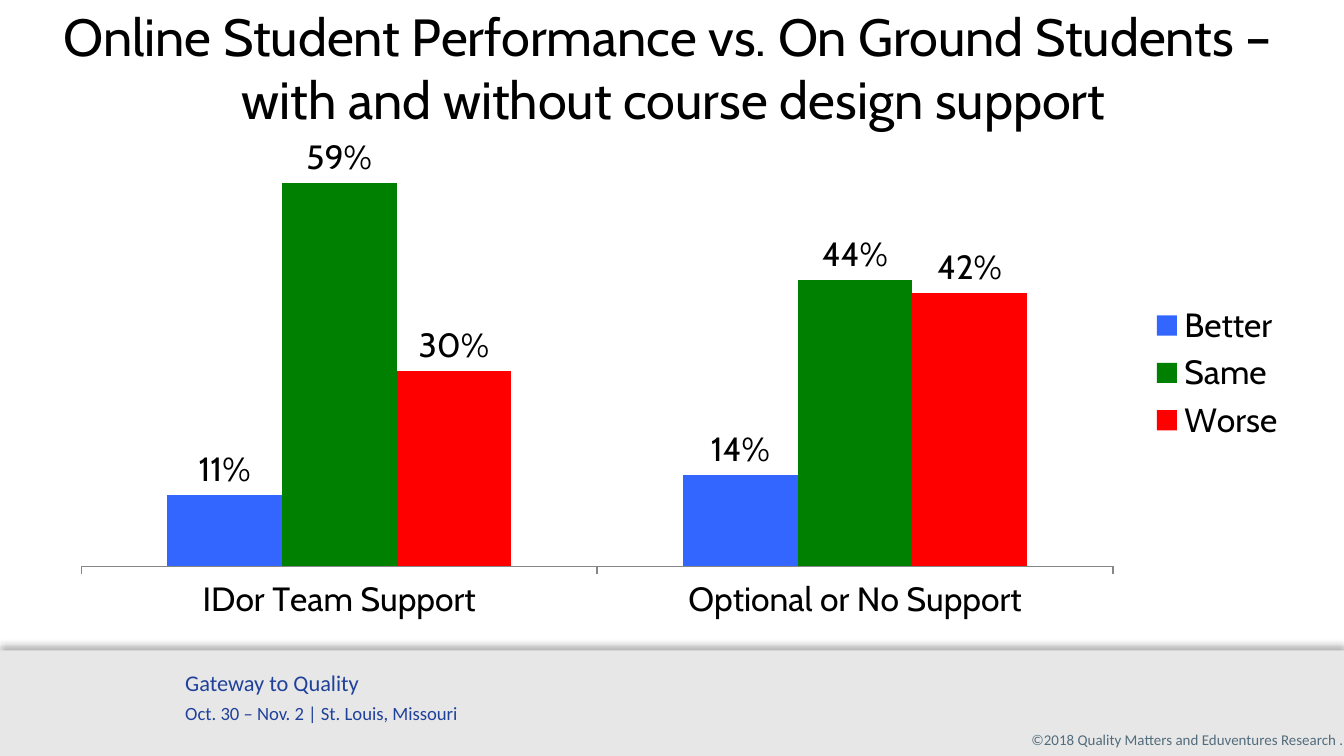
from lxml.etree import SubElement
from pptx import Presentation
from pptx.chart.data import CategoryChartData
from pptx.dml.color import RGBColor
from pptx.enum.chart import XL_CHART_TYPE, XL_LABEL_POSITION, XL_LEGEND_POSITION, XL_TICK_LABEL_POSITION, XL_TICK_MARK
from pptx.enum.shapes import MSO_SHAPE
from pptx.enum.text import MSO_ANCHOR, PP_ALIGN
from pptx.oxml import parse_xml
from pptx.oxml.ns import nsdecls, qn
from pptx.util import Inches, Pt

hues = {"ink": "000000", "band": "E7E7E7", "event": "1F419A", "rights": "526C7C", "axis": "868686",
        "Better": "3366FF", "Same": "008000", "Worse": "FF0000"}
rates = {"Better": (0.11, 0.14), "Same": (0.59, 0.44), "Worse": (0.3, 0.42)}

deck = Presentation()
deck.slide_width, deck.slide_height = Inches(10), Inches(5.625)
slide = deck.slides.add_slide(deck.slide_layouts[0])
shapes = slide.shapes


def area(left, top, width, height):
    wide, high = deck.slide_width / 100, deck.slide_height / 100
    return int(left * wide), int(top * high), int(width * wide), int(height * high)


def style(font, size, face, hue):
    font.size, font.name = Pt(size), face
    font.color.rgb = RGBColor.from_string(hues[hue])


slide.placeholders[1].element.getparent().remove(slide.placeholders[1].element)

band = shapes.add_shape(MSO_SHAPE.RECTANGLE, *area(0, 86.04, 100, 13.96))
band.fill.solid()
band.fill.fore_color.rgb = RGBColor.from_string(hues["band"])
band.line.fill.background()
band.element.spPr.append(parse_xml(
    f'<a:effectLst {nsdecls("a")}><a:outerShdw blurRad="{Pt(4)}" dist="{Pt(3)}" dir="16200000" rotWithShape="0">'
    f'<a:srgbClr val="{hues["ink"]}"><a:alpha val="30000"/></a:srgbClr></a:outerShdw></a:effectLst>'))

event = shapes.add_textbox(*area(12.8, 87.64, 63.9, 9.07)).text_frame
event.word_wrap = True
event.text = "Gateway to Quality\nOct. 30 – Nov. 2 | St. Louis, Missouri"
for line, size in zip(event.paragraphs, (12, 10)):
    style(line.font, size, "Calibri", "event")
event.paragraphs[1].space_before = Pt(3)

rights = shapes.add_textbox(*area(74.7, 95.82, 25.3, 4.27)).text_frame
rights.word_wrap = True
rights.margin_right = 0
rights.text = "©2018 Quality Matters and Eduventures Research ."
rights.paragraphs[0].alignment = PP_ALIGN.RIGHT
style(rights.paragraphs[0].font, 8, "Calibri", "rights")

title = shapes.title
title.left, title.top, title.width, title.height = area(1.7, 0, 96.8, 17.78)
frame = title.text_frame
frame.vertical_anchor = MSO_ANCHOR.MIDDLE
head = frame.paragraphs[0]
head.text = "Online Student Performance vs. On Ground Students – \vwith and without course design support"
head.alignment = PP_ALIGN.CENTER
style(head.font, 28, "Cabin", "ink")

data = CategoryChartData(number_format="0%")
data.categories = ["IDor Team Support", "Optional or No Support"]
for name, vals in rates.items():
    data.add_series(name, vals)
chart = shapes.add_chart(XL_CHART_TYPE.COLUMN_CLUSTERED, *area(4.2, 14.76, 92.5, 69.16), data).chart
style(chart.font, 18, "Cabin", "ink")
chart.has_title = False
chart.has_legend = True
chart.legend.position = XL_LEGEND_POSITION.RIGHT
chart.legend.include_in_layout = False

base = chart.category_axis
base.major_tick_mark = XL_TICK_MARK.OUTSIDE
base.tick_label_position = XL_TICK_LABEL_POSITION.LOW
base.format.line.color.rgb = RGBColor.from_string(hues["axis"])
scale = chart.value_axis
scale.minimum_scale, scale.maximum_scale = 0, 0.7
scale.has_major_gridlines = False
scale.visible = False

plot = chart.plots[0]
plot.gap_width, plot.overlap = 150, 0
plot.vary_by_categories = False
for bars in plot.series:
    bars.format.fill.solid()
    bars.format.fill.fore_color.rgb = RGBColor.from_string(hues[bars.name])
    tags = bars.data_labels
    tags.show_value = True
    tags.number_format, tags.number_format_is_linked = "0%", False
    tags.position = XL_LABEL_POSITION.OUTSIDE_END

field = plot._element.getparent()
for old in field.findall(qn("c:layout")):
    field.remove(old)
frame = parse_xml(f'<c:layout {nsdecls("c")}><c:manualLayout/></c:layout>')
rules = {"layoutTarget": "inner", "xMode": "edge", "yMode": "edge", "x": 0.02, "y": 0, "w": 0.83, "h": 0.87}
for tag, val in rules.items():
    SubElement(frame[0], qn(f"c:{tag}")).set("val", str(val))
field.insert(0, frame)

deck.save("out.pptx")
